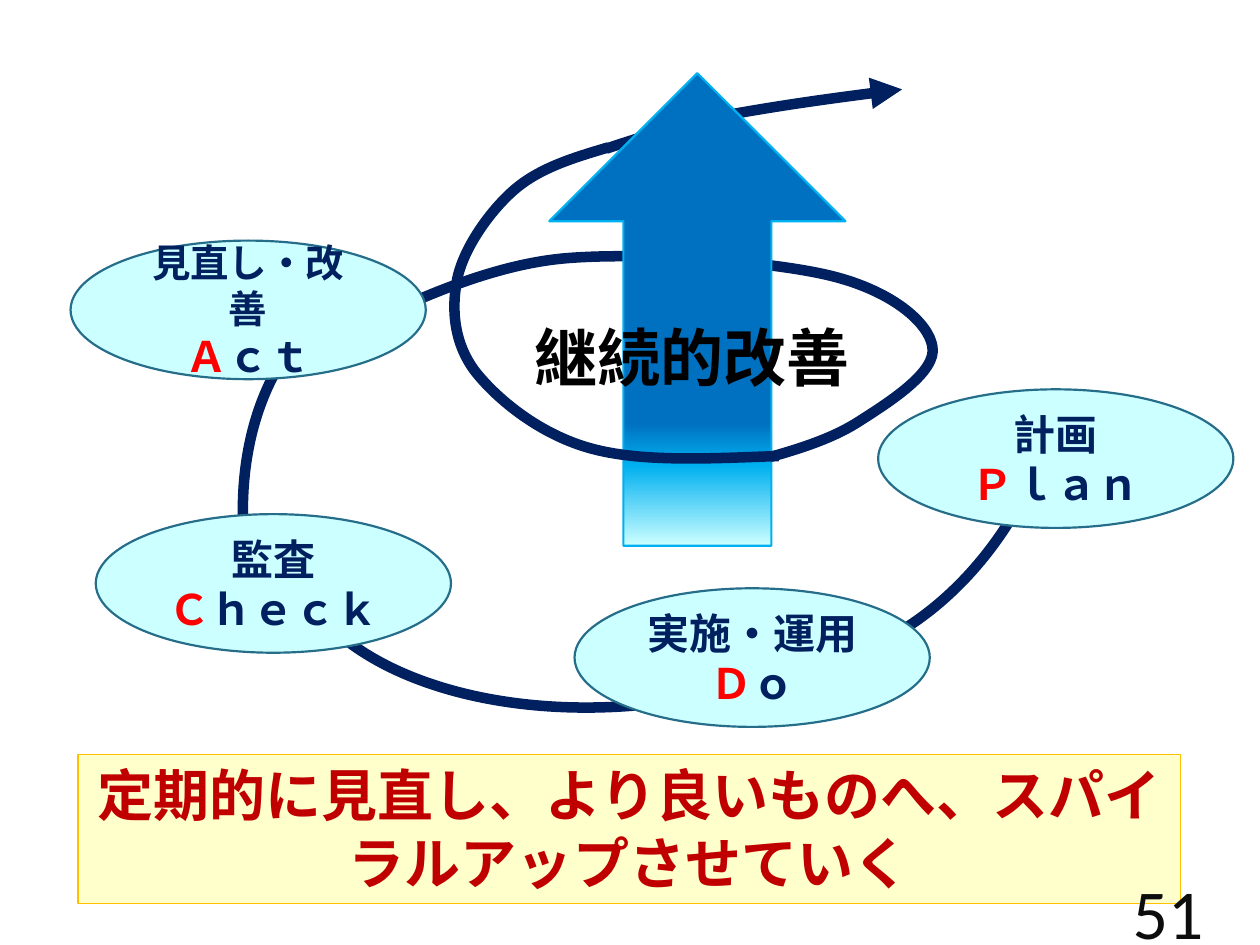
import lxml.etree
import pptx
import pptx.dml.color
import pptx.enum.shapes
import pptx.enum.text
import pptx.oxml.ns
import pptx.util

Pt = pptx.util.Pt
hex_color = pptx.dml.color.RGBColor.from_string
qn = pptx.oxml.ns.qn
KIND = pptx.enum.shapes.MSO_SHAPE
ANCHOR = pptx.enum.text.MSO_ANCHOR
ALIGN = pptx.enum.text.PP_ALIGN
NAVY, RED, AQUA = "002060", "FF0000", "CCFFFF"


def paint(shape, fill, stroke, width):
    shape.shadow.inherit = False
    if fill:
        shape.fill.solid()
        shape.fill.fore_color.rgb = hex_color(fill)
    else:
        shape.fill.background()
    shape.line.color.rgb = hex_color(stroke)
    shape.line.width = Pt(width)


def write(para, text, color, values):
    span = para.add_run()
    span.text = text
    span.font.color.rgb = hex_color(color)
    for name, value in values.items():
        setattr(span.font, name, value)


deck = pptx.Presentation()
deck.slide_width, deck.slide_height = Pt(720), Pt(540)
page = deck.slides.add_slide(deck.slide_layouts[6])

arcs = [
    (96.5, 204.5, 330.5, 236.2, 252.7),
    (306.7, 88.6, 341.3, 253.4, 112.5),
    (163.4, 180.7, 388.1, 222.5, 174.2),
]
for left, top, width, height, angle in arcs:
    arc = page.shapes.add_shape(KIND.ARC, Pt(left), Pt(top), Pt(width), Pt(height))
    arc.rotation = angle
    paint(arc, None, NAVY, 6)

curve_points = [
    [(346.3, 85), (367.9, 77.8), (388.8, 71.3), (416.9, 65.5),
     (445, 60.5), (480.2, 55.4), (515.5, 51.1)],
    [(209.5, 191.5), (205.2, 188.6), (200.9, 186.5), (220.3, 179.3),
     (239, 171.4), (280.8, 151.2), (323.3, 147.6),
     (365.8, 144), (439.9, 149), (475.2, 157.7),
     (509.8, 166.3), (530.6, 184.3), (532.8, 198),
     (535.7, 212.4), (508.3, 229.7), (490.3, 241.2),
     (472.3, 252.7), (447.8, 259.2), (423.4, 265.7)],
    [(445, 260.6), (405.4, 262.1), (366.5, 264.2), (337.7, 256.3),
     (308.9, 248.4), (285.1, 229), (272.2, 213.1),
     (259.2, 196.6), (257.8, 176.4), (261.4, 159.1),
     (265, 141.8), (280.1, 120.2), (294.5, 108),
     (308.9, 95.8), (328.3, 90), (347.8, 84.2)],
]
curves = []
for points in curve_points:
    start, *rest = [(Pt(x), Pt(y)) for x, y in points]
    builder = page.shapes.build_freeform(*start)
    builder.add_line_segments(rest, close=False)
    curve = builder.convert_to_shape()
    paint(curve, None, NAVY, 6)
    segments = list(curve._element.iter(qn("a:lnTo")))
    for first in range(0, len(segments), 3):
        bezier = lxml.etree.SubElement(segments[first].getparent(), qn("a:cubicBezTo"))
        for segment in segments[first:first + 3]:
            bezier.append(segment[0])
            segment.getparent().remove(segment)
    curves.append(curve)
lxml.etree.SubElement(curves[0].line._get_or_add_ln(), qn("a:tailEnd"), type="triangle")

arrow = page.shapes.add_shape(KIND.UP_ARROW, Pt(313.9), Pt(41.8), Pt(169.2), Pt(270))
paint(arrow, AQUA, "00B0F0", 1.25)
arrow.fill.gradient()
arrow.fill.gradient_angle = 270
stops = next(arrow._element.iter(qn("a:gsLst")))
for stop in list(stops):
    stops.remove(stop)
for percent, color in [(0, "0070C0"), (74, "0070C0"), (83, "00B0F0"), (100, AQUA)]:
    stop = lxml.etree.SubElement(stops, qn("a:gs"), pos=str(percent * 1000))
    lxml.etree.SubElement(stop, qn("a:srgbClr"), val=color)
curves[2]._element.addprevious(arrow._element)

steps = [
    (328.3, 336.2, "実施・運用", 24, "Ｄ", "ｏ"),
    (501.8, 222.5, "計画", 24, "Ｐ", "ｌａｎ"),
    (54.7, 293.8, "監査", 24, "Ｃ", "ｈｅｃｋ"),
    (40.3, 137.5, "見直し・改善", 22, "Ａ", "ｃｔ"),
]
for left, top, title, size, initial, ending in steps:
    oval = page.shapes.add_shape(KIND.OVAL, Pt(left), Pt(top), Pt(203), Pt(79.2))
    paint(oval, AQUA, "266D8A", 1.25)
    oval.text_frame.vertical_anchor = ANCHOR.MIDDLE
    para = oval.text_frame.paragraphs[0]
    para.alignment = ALIGN.CENTER
    values = {"name": "Cabin", "bold": True, "size": Pt(24)}
    write(para, title, NAVY, values | {"size": Pt(size)})
    if size == 24:
        para = oval.text_frame.add_paragraph()
        para.alignment = ALIGN.CENTER
    else:
        para.add_line_break()
    write(para, initial, RED, values)
    write(para, ending, NAVY, values)

heading = page.shapes.add_textbox(Pt(247), Pt(178.6), Pt(297.4), Pt(51.1))
banner = page.shapes.add_shape(KIND.RECTANGLE, Pt(44.6), Pt(431.3), Pt(630), Pt(85))
paint(banner, "FFFFCC", "FFC000", 0.75)
number = page.shapes.add_textbox(Pt(640.1), Pt(509.8), Pt(57.6), Pt(21.6))
texts = [
    (heading, "継続的改善", "000000", ANCHOR.TOP, ALIGN.CENTER,
     {"name": "Cabin", "size": Pt(36), "bold": True}),
    (banner, "定期的に見直し、より良いものへ、スパイラルアップさせていく", "C00000",
     ANCHOR.TOP, ALIGN.CENTER, {"name": "Arial", "size": Pt(32), "bold": True}),
    (number, "51", "0D0D0D", ANCHOR.MIDDLE, ALIGN.LEFT,
     {"name": "Calibri", "size": Pt(40)}),
]
for box, text, color, anchor, alignment, values in texts:
    box.text_frame.word_wrap = True
    box.text_frame.vertical_anchor = anchor
    para = box.text_frame.paragraphs[0]
    para.alignment = alignment
    write(para, text, color, values)

deck.save("out.pptx")
